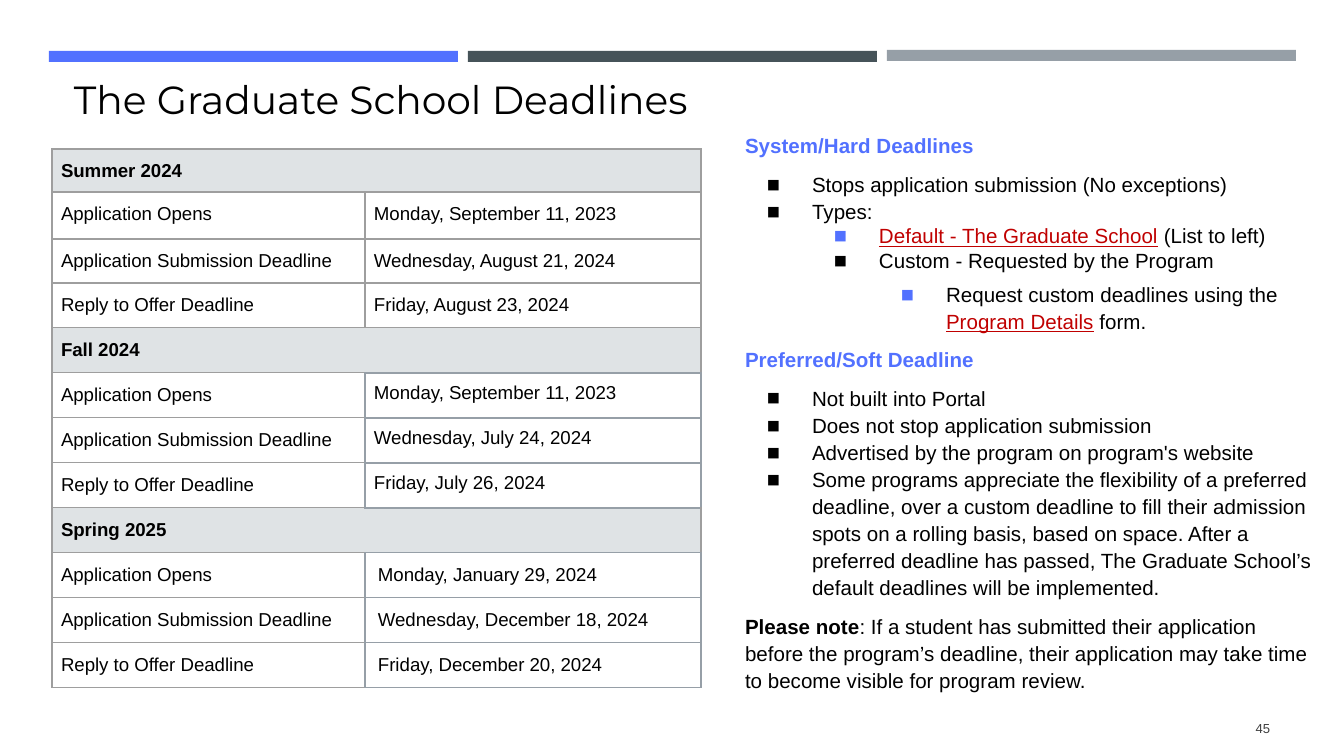
from lxml import etree
from pptx import Presentation, util as u
from pptx.dml.color import RGBColor
from pptx.enum import shapes, text
from pptx.oxml.ns import qn

PX = 914400 / 134.4
HEX = {"blue": "5271FF", "slate": "465359", "gray": "969FA7", "rule": "9E9E9E",
       "band": "DFE3E5", "black": "000000", "red": "C00000", "dark": "3F3F3F"}
STEP, HANG = 67, 45

# season, cell margins (side, top) of the dates, rule colour, rule width, dates
TERMS = [
    ("Summer 2024", (9, 9), "rule", 0.75,
     ["Monday, September 11, 2023", "Wednesday, August 21, 2024", "Friday, August 23, 2024"]),
    ("Fall 2024", (9, 7), "gray", 1,
     ["Monday, September 11, 2023", "Wednesday, July 24, 2024", "Friday, July 26, 2024"]),
    ("Spring 2025", (13, 9), "gray", 0.75,
     ["Monday, January 29, 2024", "Wednesday, December 18, 2024", "Friday, December 20, 2024"]),
]
STAGES = ["Application Opens", "Application Submission Deadline", "Reply to Offer Deadline"]

HEAD = {"color": "blue", "bold": True}
LINK = {"color": "red", "underline": True}
# indent level, bullet colour, line spacing, space before, space after, runs
NOTES = [
    (0, None, 1.1, 3.6, 0, [("System/Hard Deadlines", HEAD)]),
    (1, "black", 1.1, 6, 0, [("Stops application submission (No exceptions)", {})]),
    (1, "black", 1.1, 0, 0, [("Types:", {})]),
    (2, "blue", 1, 0, 0, [("Default - The Graduate School", LINK), (" (List to left)", {})]),
    (2, "black", 1, 0, 0, [("Custom - Requested by the Program", {})]),
    (3, "blue", 1.1, 3.6, 0, [("Request custom deadlines using the ", {}),
                              ("Program Details", LINK), (" form.", {})]),
    (0, None, 1.1, 6, 0, [("Preferred/Soft Deadline", HEAD)]),
    (1, "black", 1.1, 6, 0, [("Not built into Portal", {})]),
    (1, "black", 1.1, 0, 0, [("Does not stop application submission", {})]),
    (1, "black", 1.1, 0, 0, [("Advertised by the program on program's website", {})]),
    (1, "black", 1.1, 0, 0, [(
        "Some programs appreciate the flexibility of a preferred deadline, over a custom "
        "deadline to fill their admission spots on a rolling basis, based on space. After a "
        "preferred deadline has passed, The Graduate School’s default deadlines will be "
        "implemented.", {})]),
    (0, None, 1.1, 6, 6, [("Please note", {"bold": True}), (
        ": If a student has submitted their application before the program’s deadline, "
        "their application may take time to become visible for program review.", {})]),
]


def px(n):
    return u.Emu(round(n * PX))


def rgb(name):
    return RGBColor.from_string(HEX[name])


def put(obj, **vals):
    for key, val in vals.items():
        setattr(obj, key, val)


def pad(obj, side, top):
    put(obj, margin_left=px(side), margin_right=px(side),
        margin_top=px(top), margin_bottom=px(top))


def add_run(para, words, size, color="black", name="Arial", **font):
    run = para.add_run()
    run.text = words
    put(run.font, size=u.Pt(size), name=name, **font)
    run.font.color.rgb = rgb(color)


def place(shape, left, top, width, height):
    put(shape, left=px(left), top=px(top), width=px(width), height=px(height))


def add_box(slide, box, side, top, anchor):
    shape = slide.shapes.add_textbox(*map(px, box))
    put(shape.text_frame, word_wrap=True, vertical_anchor=anchor)
    pad(shape.text_frame, side, top)
    return shape.text_frame


def add_bar(slide, left, top, color):
    bar = slide.shapes.add_shape(shapes.MSO_SHAPE.RECTANGLE,
                                 *map(px, (left, top, 409, 11)))
    bar.shadow.inherit = False
    bar.fill.solid()
    bar.fill.fore_color.rgb = rgb(color)
    bar.line.fill.background()


def set_title(slide, words):
    title = slide.shapes.title
    place(title, 65, 71, 1216, 56)
    frame = title.text_frame
    put(frame, vertical_anchor=text.MSO_ANCHOR.BOTTOM, word_wrap=True,
        auto_size=text.MSO_AUTO_SIZE.NONE)
    pad(frame, 9, 5)
    para = frame.paragraphs[0]
    para.alignment = text.PP_ALIGN.LEFT
    add_run(para, words, 21, name="Montserrat")


def rule_cell(cell, color, width):
    props = cell._tc.get_or_add_tcPr()
    for side in "LRTB":
        line = etree.SubElement(props, qn(f"a:ln{side}"), w=str(u.Pt(width)))
        fill = etree.SubElement(line, qn("a:solidFill"))
        etree.SubElement(fill, qn("a:srgbClr"), val=HEX[color])


def fill_cell(cell, words, margins=(9, 9), color="rule", width=0.75, head=False):
    pad(cell, *margins)
    rule_cell(cell, color, width)
    if head:
        cell.fill.solid()
        cell.fill.fore_color.rgb = rgb("band")
    else:
        cell.fill.background()
    para = cell.text_frame.paragraphs[0]
    para.line_spacing = 1.15
    if words:
        add_run(para, words, 10, bold=head)


def add_dates(slide):
    high = [43, 47, 44] + [45] * 9
    table = slide.shapes.add_table(len(high), 2, *map(px, (52, 149, 649, sum(high)))).table
    put(table, first_row=False, horz_banding=False)
    for col, wide in zip(table.columns, (313, 336)):
        col.width = px(wide)
    for row, tall in zip(table.rows, high):
        row.height = px(tall)
    for i, (term, margins, color, width, dates) in enumerate(TERMS):
        top = i * (len(STAGES) + 1)
        fill_cell(table.cell(top, 0), term, head=True)
        fill_cell(table.cell(top, 1), "", head=True)
        table.cell(top, 0).merge(table.cell(top, 1))
        for r, (stage, date) in enumerate(zip(STAGES, dates), top + 1):
            fill_cell(table.cell(r, 0), stage)
            fill_cell(table.cell(r, 1), date, margins, color, width)


def set_bullet(para, level, color):
    props = para._p.get_or_add_pPr()
    props.set("marL", str(px(level * STEP)))
    props.set("indent", str(px(-HANG)))
    tint = etree.SubElement(props, qn("a:buClr"))
    etree.SubElement(tint, qn("a:srgbClr"), val=HEX[color])
    etree.SubElement(props, qn("a:buFont"), typeface="Arial")
    etree.SubElement(props, qn("a:buChar"), char="◼")


def add_notes(slide):
    frame = add_box(slide, (732, 118, 597, 614), 13, 13, text.MSO_ANCHOR.TOP)
    for i, (level, color, lines, before, after, runs) in enumerate(NOTES):
        para = frame.add_paragraph() if i else frame.paragraphs[0]
        put(para, line_spacing=lines, space_before=u.Pt(before), space_after=u.Pt(after))
        if level:
            set_bullet(para, level, color)
        for words, font in runs:
            add_run(para, words, 11, **font)


def add_number(slide, words):
    frame = add_box(slide, (1164, 708, 115, 40), 9, 5, text.MSO_ANCHOR.MIDDLE)
    para = frame.paragraphs[0]
    para.alignment = text.PP_ALIGN.RIGHT
    add_run(para, words, 7, "dark")


def main():
    deck = Presentation()
    put(deck, slide_width=px(1344), slide_height=px(756))
    slide = deck.slides.add_slide(deck.slide_layouts[5])
    for left, top, color in ((49, 51, "blue"), (468, 51, "slate"), (887, 50, "gray")):
        add_bar(slide, left, top, color)
    set_title(slide, "The Graduate School Deadlines")
    add_dates(slide)
    add_notes(slide)
    add_number(slide, "45")
    deck.save("out.pptx")


if __name__ == "__main__":
    main()
